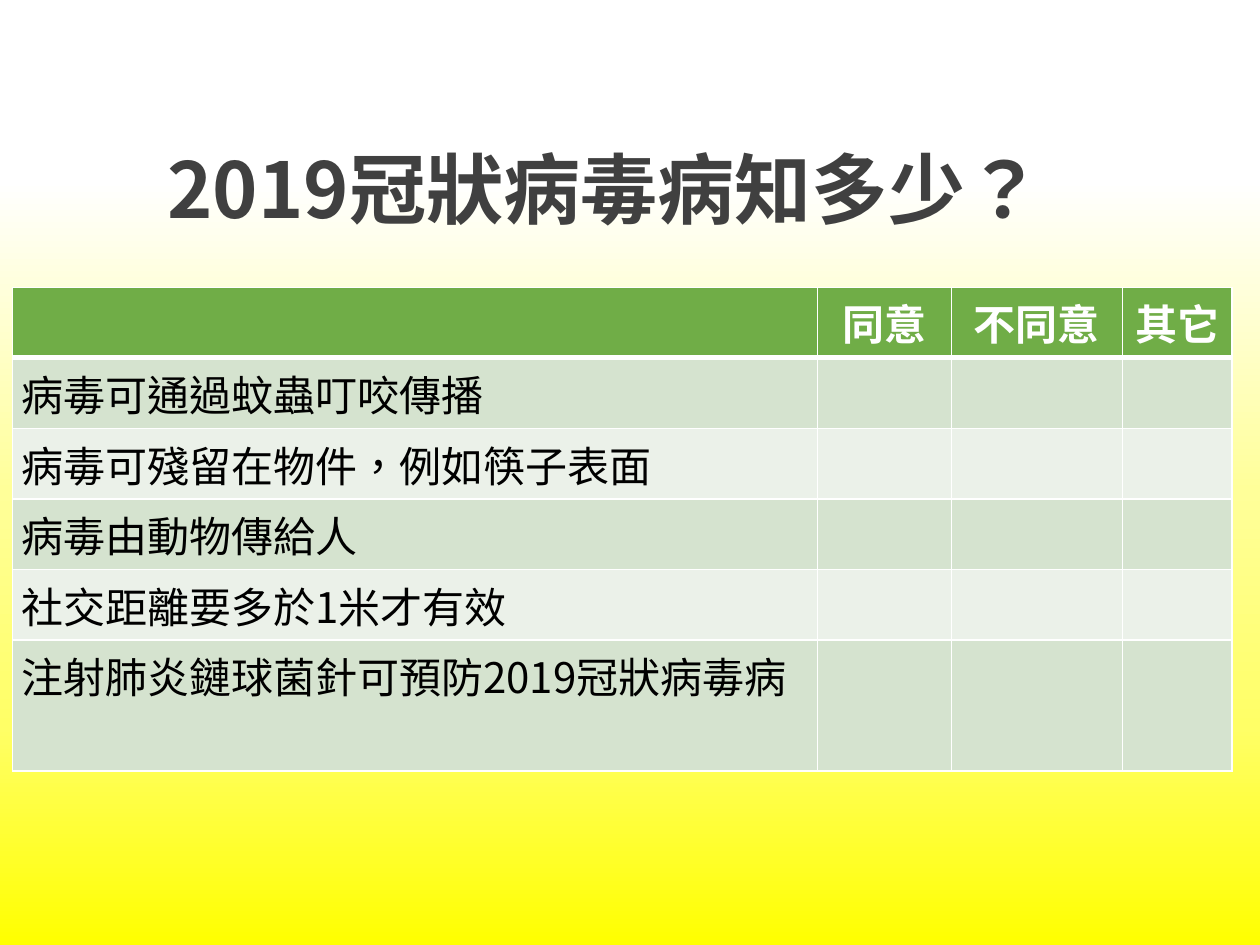
from copy import deepcopy

from lxml import etree
from pptx import Presentation
from pptx import util as u
from pptx.dml import color
from pptx.enum import text as t
from pptx.oxml import ns

FONT = "Noto Sans CJK SC"
LANGUAGE = "zh-TW"
COLORS = {
    "title": "404040",
    "header": "70AD47",
    "odd_row": "D5E3CF",
    "even_row": "EBF1E9",
    "white": "FFFFFF",
    "black": "000000",
}
GRADIENT = [(19, "FFFFFF"), (52, "FFFF99"), (77, "FFFF66"), (100, "FFFF00")]
ANSWERS = ["同意", "不同意", "其它"]
STATEMENTS = [
    "病毒可通過蚊蟲叮咬傳播",
    "病毒可殘留在物件，例如筷子表面",
    "病毒由動物傳給人",
    "社交距離要多於1米才有效",
    "注射肺炎鏈球菌針可預防2019冠狀病毒病",
]
COLUMN_WIDTHS = [6.39, 1.06, 1.36, 0.87]
ROW_HEIGHTS = [0.56] * len(STATEMENTS) + [1.04]


def write_text(frame, content, *, size, hue, bold=False, align=t.PP_ALIGN.LEFT, spacing=1.0):
    paragraph = frame.paragraphs[0]
    paragraph.alignment = align
    paragraph.line_spacing = spacing
    run = paragraph.add_run()
    run.text = content
    run.font.size = u.Pt(size)
    run.font.bold = bold
    run.font.name = FONT
    run.font.color.rgb = color.RGBColor.from_string(COLORS[hue])
    properties = run._r.get_or_add_rPr()
    properties.set("lang", LANGUAGE)
    etree.SubElement(properties, ns.qn("a:ea"), typeface=FONT)


def fill_background(slide):
    fill = slide.background.fill
    fill.gradient()
    fill.gradient_angle = 270
    stop_list = slide._element.find(".//" + ns.qn("a:gsLst"))
    for _ in range(len(GRADIENT) - len(stop_list)):
        stop_list.append(deepcopy(stop_list[0]))
    for stop, (position, hue) in zip(fill.gradient_stops, GRADIENT):
        stop.position = position / 100
        stop.color.rgb = color.RGBColor.from_string(hue)


def add_title(slide, left, top, width, height):
    shape = slide.shapes.add_textbox(*map(u.Inches, (left, top, width, height)))
    frame = shape.text_frame
    frame.word_wrap = True
    frame.vertical_anchor = t.MSO_ANCHOR.MIDDLE
    write_text(frame, "2019冠狀病毒病知多少？", size=44, hue="title", bold=True, spacing=0.9)


def style_cell(cell, hue, bottom_width):
    cell.margin_left = cell.margin_right = u.Inches(0.07)
    cell.margin_top = cell.margin_bottom = u.Inches(0.04)
    properties = cell._tc.get_or_add_tcPr()
    for side, width in (("L", 1), ("R", 1), ("T", 1), ("B", bottom_width)):
        line = etree.SubElement(properties, ns.qn(f"a:ln{side}"), w=str(u.Pt(width)))
        solid = etree.SubElement(line, ns.qn("a:solidFill"))
        etree.SubElement(solid, ns.qn("a:srgbClr"), val=COLORS["white"])
    cell.fill.solid()
    cell.fill.fore_color.rgb = color.RGBColor.from_string(COLORS[hue])


def add_survey(slide, left, top):
    box = (left, top, sum(COLUMN_WIDTHS), sum(ROW_HEIGHTS))
    table = slide.shapes.add_table(
        len(ROW_HEIGHTS), len(COLUMN_WIDTHS), *map(u.Inches, box)
    ).table
    for column, width in zip(table.columns, COLUMN_WIDTHS):
        column.width = u.Inches(width)
    for index, (row, height) in enumerate(zip(table.rows, ROW_HEIGHTS)):
        row.height = u.Inches(height)
        hue = "header" if index == 0 else "odd_row" if index % 2 else "even_row"
        for cell in row.cells:
            style_cell(cell, hue, 1 if index else 3)
    for index, answer in enumerate(ANSWERS, 1):
        write_text(table.cell(0, index).text_frame, answer, size=24, hue="white",
                   bold=True, align=t.PP_ALIGN.CENTER)
    for index, statement in enumerate(STATEMENTS, 1):
        write_text(table.cell(index, 0).text_frame, statement, size=24, hue="black")


def main():
    presentation = Presentation()
    presentation.slide_width = u.Inches(10)
    presentation.slide_height = u.Inches(7.5)
    slide = presentation.slides.add_slide(presentation.slide_layouts[6])
    fill_background(slide)
    add_title(slide, 1.23, 0.99, 8.03, 1.09)
    add_survey(slide, 0.1, 2.28)
    presentation.save("out.pptx")


if __name__ == "__main__":
    main()
